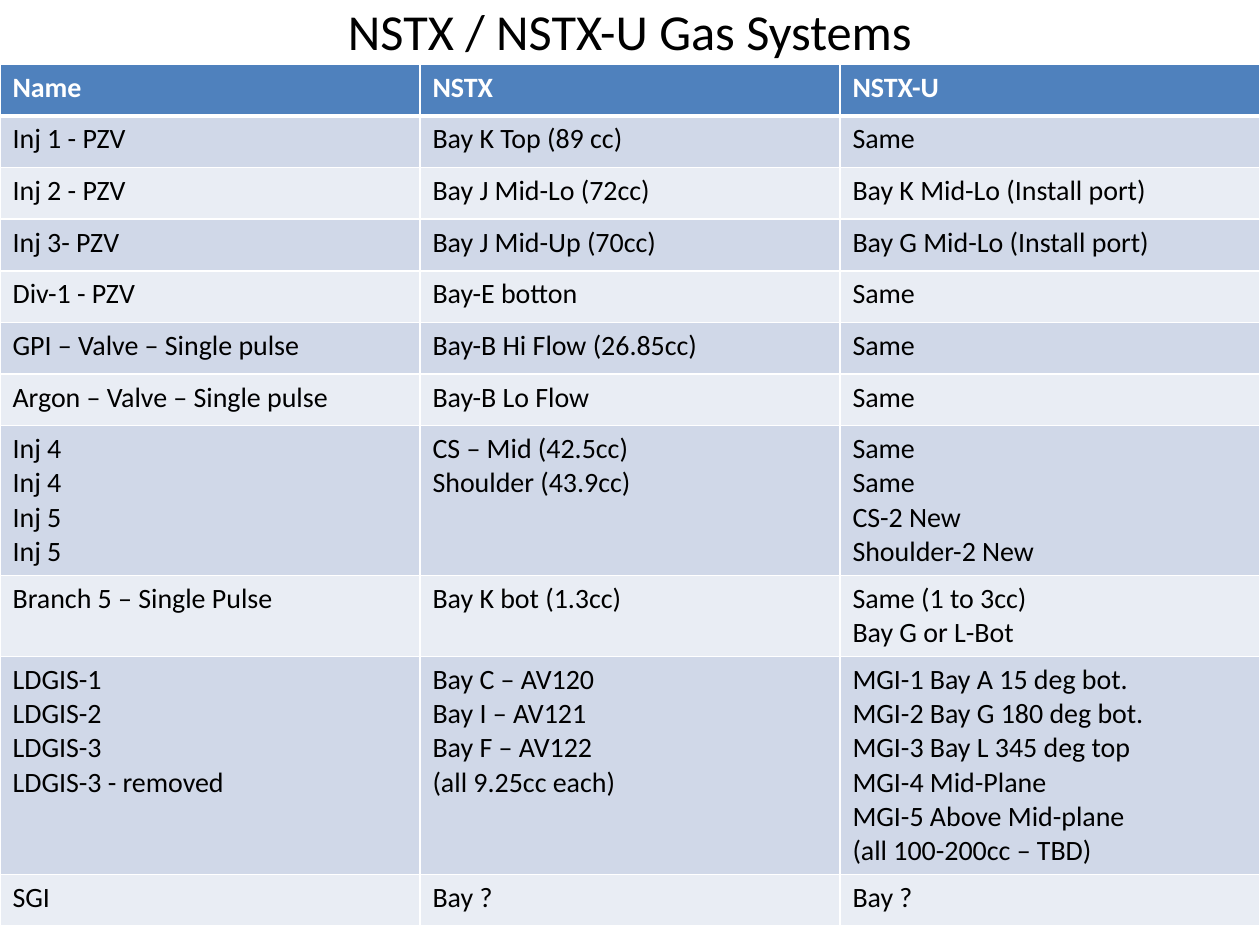
import pptx
import pptx.util
import pptx.dml.color
import pptx.enum.text
import pptx.oxml
import pptx.oxml.ns

TITLE = "NSTX / NSTX-U Gas Systems"
HEADER = ("Name", "NSTX", "NSTX-U")
SYSTEMS = [
    ("Inj 1 - PZV", "Bay K Top (89 cc)", "Same"),
    ("Inj 2 - PZV", "Bay J Mid-Lo (72cc)", "Bay K Mid-Lo (Install port)"),
    ("Inj 3- PZV", "Bay J Mid-Up (70cc)", "Bay G Mid-Lo (Install port)"),
    ("Div-1 - PZV", "Bay-E botton", "Same"),
    ("GPI – Valve – Single pulse", "Bay-B Hi Flow (26.85cc)", "Same"),
    ("Argon – Valve – Single pulse", "Bay-B Lo Flow", "Same"),
    (
        "Inj 4\nInj 4\nInj 5\nInj 5",
        "CS – Mid (42.5cc)\nShoulder (43.9cc)",
        "Same\nSame\nCS-2 New\nShoulder-2 New",
    ),
    ("Branch 5 – Single Pulse", "Bay K bot (1.3cc)", "Same (1 to 3cc)\nBay G or L-Bot"),
    (
        "LDGIS-1\nLDGIS-2\nLDGIS-3\nLDGIS-3 - removed",
        "Bay C – AV120\nBay I – AV121\nBay F – AV122\n(all 9.25cc each)",
        "MGI-1 Bay A 15 deg bot.\nMGI-2 Bay G 180 deg bot.\nMGI-3 Bay L 345 deg top\n"
        "MGI-4 Mid-Plane\nMGI-5 Above Mid-plane\n(all 100-200cc – TBD)",
    ),
    ("SGI", "Bay ?", "Bay ?"),
]

THEME = {
    "header_fill": "4F81BD",
    "bands": ("D0D8E8", "E9EDF4"),
    "border": "FFFFFF",
    "title": {"name": "Calibri", "size": pptx.util.Pt(28.8), "color": "000000"},
    "header": {"name": "Calibri", "size": pptx.util.Pt(16), "bold": True, "color": "FFFFFF"},
    "body": {"name": "Calibri", "size": pptx.util.Pt(16), "bold": False, "color": "000000"},
}
ROW_HEIGHT = pptx.util.Inches(0.41)
TABLE_HEIGHT = pptx.util.Inches(6.74)


def rgb(value):
    return pptx.dml.color.RGBColor.from_string(value)


def apply(target, values):
    for name, value in values.items():
        setattr(target, name, value)


def format_text(frame, style):
    values = {name: value for name, value in style.items() if name != "color"}
    for para in frame.paragraphs:
        for span in para.runs:
            apply(span.font, values)
            span.font.color.rgb = rgb(style["color"])


def add_borders(cell, bottom_width):
    properties = cell._tc.get_or_add_tcPr()
    widths = {"lnL": 1, "lnR": 1, "lnT": 1, "lnB": bottom_width}
    for position, (side, width) in enumerate(widths.items()):
        line = pptx.oxml.parse_xml(
            f'<a:{side} {pptx.oxml.ns.nsdecls("a")} w="{pptx.util.Pt(width)}">'
            f'<a:solidFill><a:srgbClr val="{THEME["border"]}"/></a:solidFill></a:{side}>'
        )
        properties.insert(position, line)


def add_title(page):
    box = page.shapes.title
    apply(box, {
        "left": pptx.util.Inches(0.5), "top": pptx.util.Inches(0.02),
        "width": pptx.util.Inches(9), "height": pptx.util.Inches(0.44),
    })
    frame = box.text_frame
    frame.text = TITLE
    apply(frame, {
        "auto_size": pptx.enum.text.MSO_AUTO_SIZE.NONE,
        "vertical_anchor": pptx.enum.text.MSO_ANCHOR.MIDDLE,
        "word_wrap": True,
    })
    frame.paragraphs[0].alignment = pptx.enum.text.PP_ALIGN.CENTER
    format_text(frame, THEME["title"])


def add_gas_table(page, width):
    rows = [HEADER, *SYSTEMS]
    box = page.shapes.add_table(
        len(rows), len(HEADER), 0, pptx.util.Inches(0.51), width, TABLE_HEIGHT
    )
    for row_index, values in enumerate(rows):
        is_header = row_index == 0
        box.table.rows[row_index].height = ROW_HEIGHT
        fill = THEME["header_fill"] if is_header else THEME["bands"][(row_index - 1) % 2]
        for column_index, text in enumerate(values):
            cell = box.table.cell(row_index, column_index)
            cell.text_frame.text = text
            format_text(cell.text_frame, THEME["header" if is_header else "body"])
            cell.fill.solid()
            cell.fill.fore_color.rgb = rgb(fill)
            add_borders(cell, 3 if is_header else 1)
    box.height = TABLE_HEIGHT


def main():
    deck = pptx.Presentation()
    apply(deck, {"slide_width": pptx.util.Inches(10), "slide_height": pptx.util.Inches(7.5)})
    page = deck.slides.add_slide(deck.slide_layouts[5])
    add_title(page)
    add_gas_table(page, deck.slide_width)
    deck.save("out.pptx")


if __name__ == "__main__":
    main()
